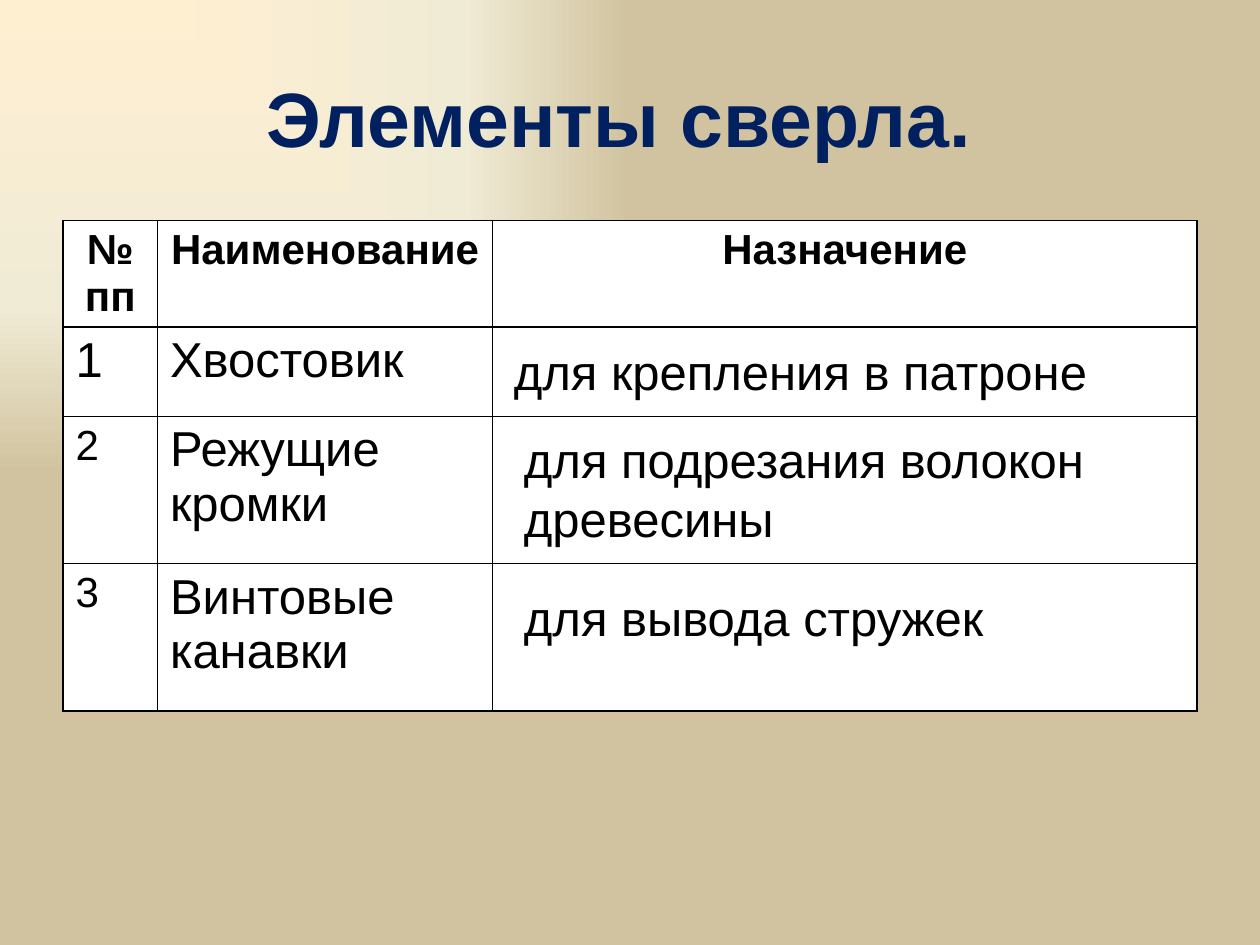
import pptx
import pptx.util
import pptx.dml.color
import pptx.enum.text
import pptx.oxml.ns
from lxml import etree

COLORS = {"title": "002060", "text": "000000", "border": "000000", "cell": "FFFFFF"}
BACKGROUND_STOPS = [(0, "FFEFD1"), (65, "F0EBD5"), (100, "D1C39F")]
FONT = "Arial"
WIDTH, HEIGHT = 10, 7.5
MARGIN = WIDTH * 0.05
TABLE_TOP = 1.75
COLUMNS = [0.75, 2.66, 5.59]
ROWS = [0.83, 0.71, 1.17, 1.17]

TITLE = "Элементы сверла. "
HEADERS = [["№", "пп"], ["Наименование "], ["Назначение"]]
PARTS = [("1", 28, "Хвостовик"), ("2", 24, "Режущие кромки"), ("3", 24, "Винтовые канавки")]
PURPOSES = [
    ("для крепления в патроне", 3.98, 2.66, 0.57),
    ("для подрезания волокон древесины", 4.06, 3.36, 1.04),
    ("для вывода стружек", 4.06, 4.61, 0.57),
]

qn = pptx.oxml.ns.qn
Inches = pptx.util.Inches
CENTER = pptx.enum.text.PP_ALIGN.CENTER


def rgb(name):
    return pptx.dml.color.RGBColor.from_string(COLORS[name])


def write(frame, lines, size, color="text", bold=False, align=None):
    for index, line in enumerate(lines):
        paragraph = frame.add_paragraph() if index else frame.paragraphs[0]
        paragraph.alignment = align
        run = paragraph.add_run()
        run.text = line
        run.font.name = FONT
        run.font.size = pptx.util.Pt(size)
        run.font.bold = bold
        run.font.color.rgb = rgb(color)


def add_text(slide, box, lines, size, **style):
    frame = slide.shapes.add_textbox(*map(Inches, box)).text_frame
    frame.word_wrap = True
    write(frame, lines, size, **style)
    return frame


def paint_background(slide):
    slide.background.fill.solid()
    properties = slide.element.find(".//" + qn("p:bgPr"))
    properties.remove(properties[0])
    gradient = etree.Element(qn("a:gradFill"), rotWithShape="1")
    properties.insert(0, gradient)
    stops = etree.SubElement(gradient, qn("a:gsLst"))
    for position, color in BACKGROUND_STOPS:
        stop = etree.SubElement(stops, qn("a:gs"), pos=str(position * 1000))
        etree.SubElement(stop, qn("a:srgbClr"), val=color)
    shade = etree.SubElement(gradient, qn("a:path"), {"path": "rect"})
    etree.SubElement(shade, qn("a:fillToRect"), r="100000", b="100000")


def style_cell(cell):
    properties = cell._tc.get_or_add_tcPr()
    for side in ("a:lnL", "a:lnR", "a:lnT", "a:lnB"):
        line = etree.SubElement(properties, qn(side), w=str(pptx.util.Pt(1)))
        fill = etree.SubElement(line, qn("a:solidFill"))
        etree.SubElement(fill, qn("a:srgbClr"), val=COLORS["border"])
    cell.fill.solid()
    cell.fill.fore_color.rgb = rgb("cell")


def add_parts_table(slide):
    box = (MARGIN, TABLE_TOP, sum(COLUMNS), sum(ROWS))
    table = slide.shapes.add_table(len(ROWS), len(COLUMNS), *map(Inches, box)).table
    for column, width in zip(table.columns, COLUMNS):
        column.width = Inches(width)
    for row, height in zip(table.rows, ROWS):
        row.height = Inches(height)
    for cell in table.iter_cells():
        style_cell(cell)
    for column, lines in enumerate(HEADERS):
        write(table.cell(0, column).text_frame, lines, 24, bold=True, align=CENTER)
    for row, (number, size, name) in enumerate(PARTS, start=1):
        write(table.cell(row, 0).text_frame, [number], size)
        write(table.cell(row, 1).text_frame, [name], 28)


def main():
    presentation = pptx.Presentation()
    presentation.slide_width = Inches(WIDTH)
    presentation.slide_height = Inches(HEIGHT)
    slide = presentation.slides.add_slide(presentation.slide_layouts[6])
    paint_background(slide)
    add_parts_table(slide)
    title = add_text(slide, (MARGIN, 0.3, WIDTH - 2 * MARGIN, 1.25), [TITLE], 44,
                     color="title", bold=True, align=CENTER)
    title.vertical_anchor = pptx.enum.text.MSO_ANCHOR.MIDDLE
    for purpose, left, top, height in PURPOSES:
        frame = add_text(slide, (left, top, 5.08, height), [purpose], 28)
        frame.auto_size = pptx.enum.text.MSO_AUTO_SIZE.SHAPE_TO_FIT_TEXT
    presentation.save("out.pptx")


if __name__ == "__main__":
    main()
